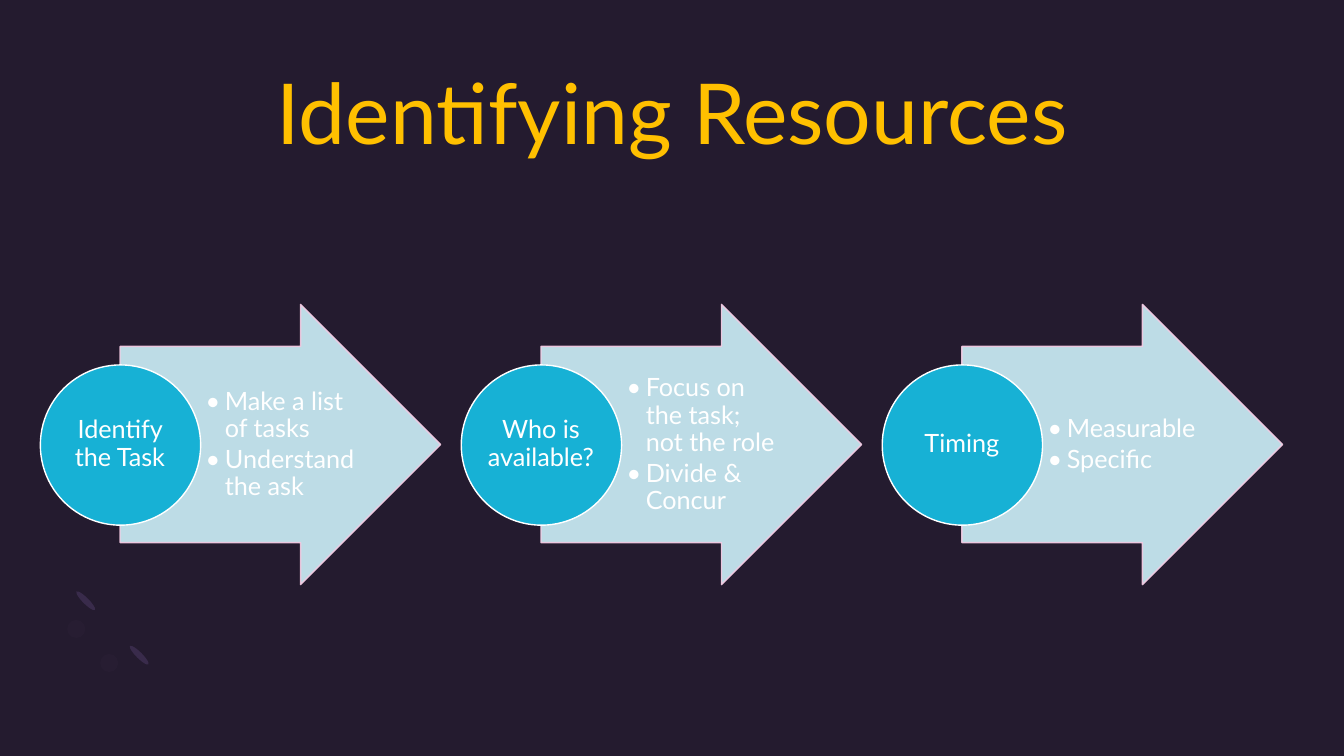
from dataclasses import dataclass

import pptx
import pptx.dml.color
import pptx.enum.shapes
import pptx.enum.text
import pptx.oxml
import pptx.oxml.ns
import pptx.util

SLIDE_WIDTH = pptx.util.Inches(13.33)
SLIDE_HEIGHT = pptx.util.Inches(7.5)
COLUMNS = ROWS = 100
STEP_COLUMNS = 31.32
FONT = "Lato"
WHITE = "FFFFFF"
SHAPES = pptx.enum.shapes.MSO_SHAPE
ALIGN = pptx.enum.text.PP_ALIGN
ANCHOR = pptx.enum.text.MSO_ANCHOR


@dataclass(frozen=True)
class Cell:
    """An area measured in hundredths of the slide's width and height."""
    column: float
    row: float
    columns: float
    rows: float

    def moved(self, columns: float) -> "Cell":
        return Cell(self.column + columns, self.row, self.columns, self.rows)

    def box(self) -> tuple[int, int, int, int]:
        column_width, row_height = SLIDE_WIDTH / COLUMNS, SLIDE_HEIGHT / ROWS
        return (round(self.column * column_width), round(self.row * row_height),
                round(self.columns * column_width), round(self.rows * row_height))


@dataclass(frozen=True)
class Step:
    name: str
    points: tuple[str, ...]


@dataclass(frozen=True)
class Fleck:
    cell: Cell
    color: str
    rotation: float


TITLE = Cell(4.5, 8, 91, 19.47)
ARROW = Cell(8.93, 40.27, 23.86, 37.07)
POINTS = Cell(14.93, 45.87, 11.9, 26)
CIRCLE = Cell(3, 48.27, 11.93, 21.2)
NAME = Cell(4.73, 51.33, 8.4, 14.93)

STEPS = (
    Step("Identify the Task", ("Make a list of tasks", "Understand the ask")),
    Step("Who is available?", ("Focus on the task; not the role", "Divide & Concur")),
    Step("Timing", ("Measurable", "Specific")),
)
FLECKS = (
    Fleck(Cell(10.13, 84.93, 0.45, 3.47), "392B4B", 135),
    Fleck(Cell(6.15, 77.73, 0.45, 3.47), "392B4B", 135),
    Fleck(Cell(5, 82, 1.35, 2.4), "271D32", 0),
    Fleck(Cell(7.45, 86.5, 1.35, 2.4), "271D32", 0),
)


def rgb(color: str) -> pptx.dml.color.RGBColor:
    return pptx.dml.color.RGBColor.from_string(color)


def set_opacity(fill, percent: int) -> None:
    color = fill.fore_color._xFill.find(pptx.oxml.ns.qn("a:srgbClr"))
    alpha = pptx.oxml.parse_xml(f'<a:alpha {pptx.oxml.ns.nsdecls("a")} val="{percent * 1000}"/>')
    color.append(alpha)


def add_bullet(paragraph) -> None:
    properties = paragraph._p.get_or_add_pPr()
    indent = pptx.util.Inches(0.19)
    properties.set("marL", str(indent))
    properties.set("indent", str(-indent))
    for tag in (f'buFont {pptx.oxml.ns.nsdecls("a")} typeface="{FONT}"',
                f'buChar {pptx.oxml.ns.nsdecls("a")} char="•"'):
        properties.append(pptx.oxml.parse_xml(f"<a:{tag}/>"))


def add_text(slide, cell: Cell, paragraphs: tuple[str, ...], *, size: float = 18,
             color: str = WHITE, align=ALIGN.CENTER, anchor=ANCHOR.MIDDLE,
             line_spacing: float = 0.9, space_after: float = 0, bullets: bool = False,
             margins: tuple[float, float, float, float] = (0.01, 0.01, 0.01, 0.01)) -> None:
    """Margins are left, top, right and bottom, in inches."""
    frame = slide.shapes.add_textbox(*cell.box()).text_frame
    frame.word_wrap = True
    frame.vertical_anchor = anchor
    (frame.margin_left, frame.margin_top, frame.margin_right,
     frame.margin_bottom) = map(pptx.util.Inches, margins)
    for index, text in enumerate(paragraphs):
        paragraph = frame.add_paragraph() if index else frame.paragraphs[0]
        paragraph.alignment = align
        paragraph.line_spacing = line_spacing
        paragraph.space_after = pptx.util.Pt(space_after)
        if bullets:
            add_bullet(paragraph)
        run = paragraph.add_run()
        run.text = text
        run.font.name = FONT
        run.font.size = pptx.util.Pt(size)
        run.font.color.rgb = rgb(color)


def add_shape(slide, kind, cell: Cell, color: str, *, line: str | None = None,
              opacity: int = 100, rotation: float = 0):
    shape = slide.shapes.add_shape(kind, *cell.box())
    shape.shadow.inherit = False
    shape.rotation = rotation
    shape.fill.solid()
    shape.fill.fore_color.rgb = rgb(color)
    if line:
        shape.line.color.rgb = rgb(line)
        shape.line.width = pptx.util.Pt(1)
    else:
        shape.line.fill.background()
    if opacity < 100:
        set_opacity(shape.fill, opacity)
        if line:
            set_opacity(shape.line.fill, opacity)
    return shape


def add_step(slide, step: Step, offset: float) -> None:
    arrow = add_shape(slide, SHAPES.RIGHT_ARROW, ARROW.moved(offset), "CEF1FA",
                      line="F6CDE5", opacity=90)
    arrow.adjustments[0], arrow.adjustments[1] = 0.7, 0.5
    add_text(slide, POINTS.moved(offset), step.points, align=ALIGN.LEFT, bullets=True,
             space_after=2.7, margins=(0.05, 0.01, 0.03, 0.01))
    add_shape(slide, SHAPES.OVAL, CIRCLE.moved(offset), "17B1D5", line=WHITE)
    add_text(slide, NAME.moved(offset), (step.name,))


def main() -> None:
    presentation = pptx.Presentation()
    presentation.slide_width = SLIDE_WIDTH
    presentation.slide_height = SLIDE_HEIGHT
    slide = presentation.slides.add_slide(presentation.slide_layouts[6])
    slide.background.fill.solid()
    slide.background.fill.fore_color.rgb = rgb("241B2F")

    for fleck in FLECKS:
        add_shape(slide, SHAPES.OVAL, fleck.cell, fleck.color, rotation=fleck.rotation)
    add_text(slide, TITLE, ("Identifying Resources",), size=60, color="FFC000",
             anchor=ANCHOR.TOP, line_spacing=1.0, margins=(0, 0, 0, 0))
    for index, step in enumerate(STEPS):
        add_step(slide, step, index * STEP_COLUMNS)
    presentation.save("out.pptx")


if __name__ == "__main__":
    main()
